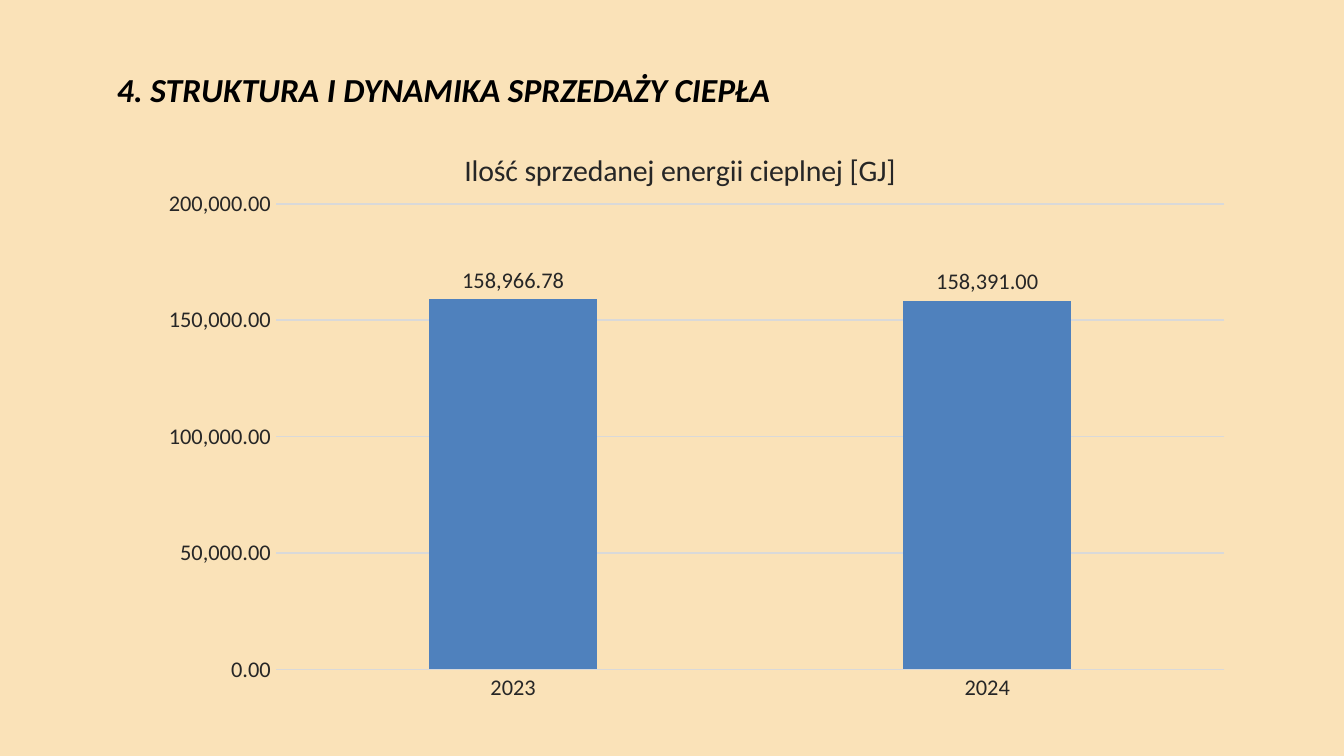
import dataclasses

import pptx
import pptx.chart.data
import pptx.dml.color
import pptx.enum.chart
import pptx.enum.text
import pptx.oxml
import pptx.oxml.ns
import pptx.util

Inches = pptx.util.Inches


@dataclasses.dataclass(frozen=True)
class Theme:
    font: str = "Calibri"
    back: str = "FAE2B8"
    head: str = "000000"
    ink: str = "262626"
    grid: str = "D9D9D9"
    bar: str = "4F81BD"
    head_size: int = 18
    title_size: int = 16
    label_size: int = 12
    line: float = 0.75


THEME = Theme()
FORMAT = "#,##0.00"
LEFT, WIDTH = 0.78, 8.5


def paint(fill, color):
    fill.solid()
    fill.fore_color.rgb = pptx.dml.color.RGBColor.from_string(color)


def style(font, size, color=THEME.ink, bold=False, italic=False):
    font.name = THEME.font
    font.size = pptx.util.Pt(size)
    font.bold = bold
    font.italic = italic
    font.color.rgb = pptx.dml.color.RGBColor.from_string(color)


def rule(line):
    paint(line.fill, THEME.grid)
    line.width = pptx.util.Pt(THEME.line)


def place(parent, index, target="", **spots):
    """Give a chart part a manual layout, in fractions of the chart."""
    tag = pptx.oxml.ns.qn("c:layout")
    old = parent.find(tag)
    if old is not None:
        parent.remove(old)
    parts = [f'<c:layoutTarget val="{target}"/>'] if target else []
    parts += [f'<c:{key}Mode val="edge"/>' for key in "xy"]
    parts += [f'<c:{key} val="{value}"/>' for key, value in spots.items()]
    parent.insert(index, pptx.oxml.parse_xml(
        f'<c:layout {pptx.oxml.ns.nsdecls("c")}><c:manualLayout>'
        f'{"".join(parts)}</c:manualLayout></c:layout>'))


def add_head(slide, text):
    box = slide.shapes.add_textbox(
        Inches(LEFT), Inches(0.47), Inches(WIDTH), Inches(0.47))
    frame = box.text_frame
    frame.word_wrap = True
    frame.margin_left = frame.margin_right = Inches(0.09)
    frame.margin_top = frame.margin_bottom = Inches(0.04)
    frame.vertical_anchor = pptx.enum.text.MSO_ANCHOR.TOP
    frame.text = text
    style(frame.paragraphs[0].runs[0].font, THEME.head_size, THEME.head,
          bold=True, italic=True)


def add_bars(slide, title, sales):
    data = pptx.chart.data.CategoryChartData(number_format=FORMAT)
    data.categories = list(sales)
    data.add_series("Series 1", list(sales.values()))
    chart = slide.shapes.add_chart(
        pptx.enum.chart.XL_CHART_TYPE.COLUMN_CLUSTERED,
        Inches(LEFT), Inches(0.94), Inches(WIDTH), Inches(4.44), data).chart
    chart.has_legend = False
    style(chart.font, THEME.label_size)
    set_title(chart, title)
    set_axes(chart)
    set_plot(chart.plots[0])
    area = chart.plots[0]._element.getparent()
    place(area, 0, "inner", x=0.15, y=0.13, w=0.83, h=0.78)


def set_title(chart, text):
    chart.has_title = True
    title = chart.chart_title
    title.text_frame.text = text
    style(title.text_frame.paragraphs[0].runs[0].font, THEME.title_size)
    title.include_in_layout = False
    place(title._element, 1, x=0.31, y=0.03)


def set_axes(chart):
    none = pptx.enum.chart.XL_TICK_MARK.NONE
    for axis in (chart.category_axis, chart.value_axis):
        axis.major_tick_mark = axis.minor_tick_mark = none
        style(axis.tick_labels.font, THEME.label_size)
    rule(chart.category_axis.format.line)
    scale = chart.value_axis
    scale.minimum_scale, scale.maximum_scale = 0, 200000
    scale.major_unit = 50000
    scale.has_major_gridlines = True
    rule(scale.major_gridlines.format.line)
    scale.format.line.fill.background()
    scale.tick_labels.number_format = FORMAT
    scale.tick_labels.number_format_is_linked = False


def set_plot(plot):
    plot.gap_width = 182
    plot.vary_by_categories = False
    bars = plot.series[0]
    paint(bars.format.fill, THEME.bar)
    labels = bars.data_labels
    labels.show_value = True
    labels.number_format = FORMAT
    labels.number_format_is_linked = False
    labels.position = pptx.enum.chart.XL_LABEL_POSITION.OUTSIDE_END
    style(labels.font, THEME.label_size)


def main():
    deck = pptx.Presentation()
    deck.slide_width = Inches(10)
    deck.slide_height = deck.slide_width * 9 // 16
    slide = deck.slides.add_slide(deck.slide_layouts[6])
    paint(slide.background.fill, THEME.back)
    add_head(slide, "4. STRUKTURA I DYNAMIKA SPRZEDAŻY CIEPŁA")
    add_bars(slide, "Ilość sprzedanej energii cieplnej [GJ]",
             {"2023": 158966.78, "2024": 158391})
    deck.save("out.pptx")


if __name__ == "__main__":
    main()
